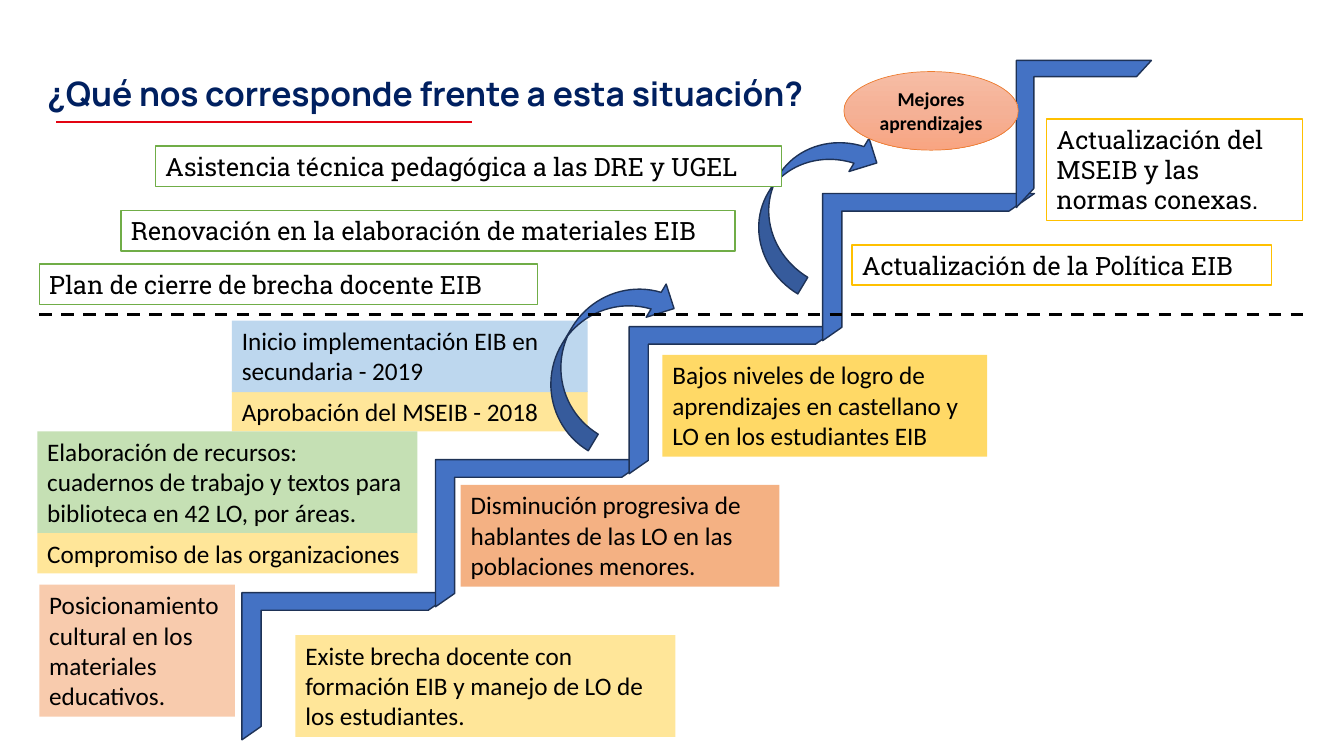
from copy import deepcopy

from lxml import etree
from pptx import Presentation
from pptx.dml.color import RGBColor
from pptx.enum import dml, shapes, text
from pptx.oxml import ns
from pptx.util import Inches, Pt

HUES = {
    "navy": "002060", "red": "E30412", "black": "000000", "white": "FFFFFF",
    "blue": "4472C4", "edge": "1E3256", "sand": "FFE699", "sky": "BDD7EE",
    "mint": "C5E0B4", "peach": "F8CBAD", "clay": "F4B183", "gold": "FFD966",
    "amber": "FFC000", "green": "70AD47", "rust": "ED7D31",
    "glow1": "F7BDA5", "glow2": "F5B196", "glow3": "F8A582",
}
TITLE = "¿Qué nos corresponde frente a esta situación?"
GOAL = "Mejores aprendizajes"

# words, fill, (left, top, width, height)
CARDS = [
    ("Aprobación del MSEIB - 2018", "sand", (2.3, 3.88, 3.53, 0.4)),
    ("Inicio implementación EIB en secundaria - 2019", "sky", (2.3, 3.18, 3.53, 0.71)),
    ("Elaboración de recursos: cuadernos de trabajo y textos para biblioteca en 42 LO, por áreas.",
     "mint", (0.37, 4.28, 3.77, 1.01)),
    ("Compromiso de las organizaciones", "sand", (0.37, 5.29, 3.77, 0.4)),
    ("Posicionamiento cultural en los materiales educativos.", "peach", (0.39, 5.8, 1.94, 1.31)),
    ("Disminución progresiva de hablantes de las LO en las poblaciones menores.",
     "clay", (4.57, 4.81, 3.16, 1.01)),
    ("Bajos niveles de logro de aprendizajes en castellano y LO en los estudiantes EIB",
     "gold", (6.57, 3.52, 3.22, 1.01)),
    ("Existe brecha docente con formación EIB y manejo de LO de los estudiantes.",
     "sand", (2.93, 6.3, 3.77, 1.01)),
]
# words, border, (left, top, width, height)
LABELS = [
    ("Actualización de la Política EIB", "amber", (8.45, 2.43, 4.16, 0.4)),
    ("Plan de cierre de brecha docente EIB", "green", (0.39, 2.62, 4.94, 0.4)),
    ("Actualización del MSEIB y las normas conexas.", "amber", (10.38, 1.18, 2.54, 1.01)),
    ("Renovación en la elaboración de materiales EIB", "green", (1.2, 2.09, 6.09, 0.4)),
    ("Asistencia técnica pedagógica a las DRE y UGEL", "green", (1.54, 1.45, 6.21, 0.4)),
]
STEPS, STEP_X, STEP_Y = 5, 2.4, 5.88
RUN, RISE = 1.92, 1.32
STEP_W, TOP_W, STEP_H = 2.1, 1.34, 1.46
ARROWS = [(7.17, 1.6, 1.71, 0.77), (5.06, 3.1, 1.84, 0.77)]
TILT = 301.1


def hue(name):
    return RGBColor.from_string(HUES[name])


def box(at):
    return [Inches(n) for n in at]


def write(para, words, face, size, color="black", bold=False):
    run = para.add_run()
    run.text = words
    font = run.font
    font.name, font.size, font.bold = face, Pt(size), bold
    font.color.rgb = hue(color)


def edge(item, color, width):
    item.line.color.rgb = hue(color)
    item.line.width = Pt(width)


def card(slide, words, at, face, fill, border=None):
    item = slide.shapes.add_textbox(*box(at))
    item.fill.solid()
    item.fill.fore_color.rgb = hue(fill)
    if border:
        edge(item, border, 1)
    frame = item.text_frame
    frame.word_wrap = True
    frame.auto_size = text.MSO_AUTO_SIZE.SHAPE_TO_FIT_TEXT
    write(frame.paragraphs[0], words, face, 18)


def rule(slide, left, right, y, color, width):
    """Draw a level line without a shadow."""
    line = slide.shapes.add_connector(
        shapes.MSO_CONNECTOR.STRAIGHT, *box((left, y, right, y)))
    edge(line, color, width)
    etree.SubElement(line._element.spPr, ns.qn("a:effectLst"))
    return line


def blue(slide, kind, at):
    """Add a blue preset shape with a dark edge."""
    item = slide.shapes.add_shape(kind, *box(at))
    item.shadow.inherit = False
    item.fill.solid()
    item.fill.fore_color.rgb = hue("blue")
    edge(item, "edge", 1)
    return item


def stairs(slide):
    for i in range(STEPS):
        width = TOP_W if i == STEPS - 1 else STEP_W
        at = (STEP_X + i * RUN, STEP_Y - i * RISE, width, STEP_H)
        step = blue(slide, shapes.MSO_SHAPE.HALF_FRAME, at)
        step.adjustments[0], step.adjustments[1] = 0.12, 0.13


def goal(slide):
    oval = slide.shapes.add_shape(shapes.MSO_SHAPE.OVAL, *box((8.37, 0.71, 1.73, 0.78)))
    oval.shadow.inherit = False
    oval.fill.gradient()
    oval.fill.gradient_angle = 270
    first = oval.fill.gradient_stops[0]._gs
    first.addnext(deepcopy(first))
    for i, stop in enumerate(oval.fill.gradient_stops):
        stop.position = i / 2
        stop.color.rgb = hue(f"glow{i + 1}")
    edge(oval, "rust", 0.5)
    frame = oval.text_frame
    frame.word_wrap = True
    frame.vertical_anchor = text.MSO_ANCHOR.MIDDLE
    para = frame.paragraphs[0]
    para.alignment = text.PP_ALIGN.CENTER
    write(para, GOAL, "Calibri", 14, bold=True)


def main():
    deck = Presentation()
    deck.slide_width, deck.slide_height = Inches(13.33), Inches(7.5)
    slide = deck.slides.add_slide(deck.slide_layouts[5])

    title = slide.shapes.title
    title.left, title.top, title.width, title.height = box((0.37, 0.68, 8.57, 0.53))
    title.text_frame.vertical_anchor = text.MSO_ANCHOR.MIDDLE
    para = title.text_frame.paragraphs[0]
    para.alignment, para.line_spacing = text.PP_ALIGN.LEFT, 0.9
    write(para, TITLE, "Manrope", 24, "navy", True)
    rule(slide, 0.56, 4.68, 1.21, "red", 1.5)

    for words, fill, at in CARDS:
        card(slide, words, at, "Calibri", fill)
    stairs(slide)
    for at in ARROWS:
        blue(slide, shapes.MSO_SHAPE.CURVED_DOWN_ARROW, at).rotation = TILT
    divide = rule(slide, 0.39, 13, 3.12, "black", 2.25)
    divide.line.dash_style = dml.MSO_LINE.DASH
    goal(slide)
    for words, border, at in LABELS:
        card(slide, words, at, "Roboto Slab", "white", border)

    deck.save("out.pptx")


if __name__ == "__main__":
    main()
